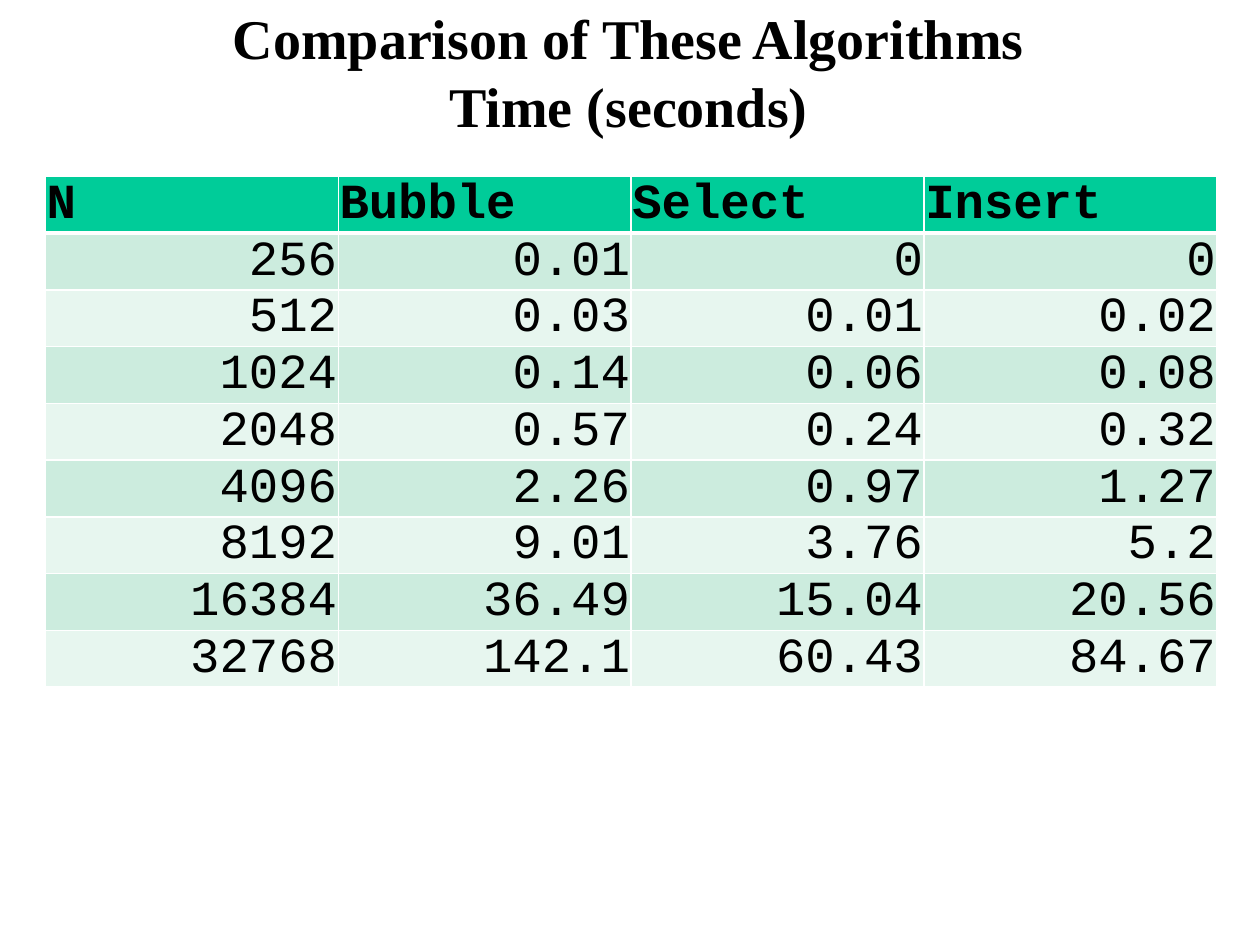
import lxml.etree
import pptx
import pptx.dml.color
import pptx.enum.text
import pptx.oxml.ns
import pptx.util
from pptx.util import Inches

BLACK = pptx.dml.color.RGBColor(0x00, 0x00, 0x00)
WHITE = pptx.dml.color.RGBColor(0xFF, 0xFF, 0xFF)
HEADER_GREEN = pptx.dml.color.RGBColor(0x00, 0xCC, 0x99)
BAND_GREENS = [
    pptx.dml.color.RGBColor(0xCC, 0xEC, 0xDE),
    pptx.dml.color.RGBColor(0xE7, 0xF6, 0xEF),
]

TIMES = [
    ["N", "Bubble", "Select", "Insert"],
    ["256", "0.01", "0", "0"],
    ["512", "0.03", "0.01", "0.02"],
    ["1024", "0.14", "0.06", "0.08"],
    ["2048", "0.57", "0.24", "0.32"],
    ["4096", "2.26", "0.97", "1.27"],
    ["8192", "9.01", "3.76", "5.2"],
    ["16384", "36.49", "15.04", "20.56"],
    ["32768", "142.1", "60.43", "84.67"],
]


def add_run(paragraph, text, font_name, size, bold):
    run = paragraph.add_run()
    run.text = text
    run.font.name = font_name
    run.font.size = pptx.util.Pt(size)
    run.font.bold = bold
    run.font.color.rgb = BLACK


def add_border(cell, side, points):
    qn = pptx.oxml.ns.qn
    properties = cell._tc.get_or_add_tcPr()
    line = lxml.etree.SubElement(properties, qn(f"a:ln{side}"), w=str(pptx.util.Pt(points)))
    fill = lxml.etree.SubElement(line, qn("a:solidFill"))
    lxml.etree.SubElement(fill, qn("a:srgbClr"), val=str(WHITE))


presentation = pptx.Presentation()
presentation.slide_width = Inches(10)
presentation.slide_height = Inches(7.5)
slide = presentation.slides.add_slide(presentation.slide_layouts[5])
slide.background.fill.solid()
slide.background.fill.fore_color.rgb = WHITE

# Title in two lines
title = slide.shapes.title
title.left, title.top = Inches(0.74), Inches(0.06)
title.width, title.height = Inches(8.5), Inches(1.01)
title.text_frame.vertical_anchor = pptx.enum.text.MSO_ANCHOR.MIDDLE
heading = title.text_frame.paragraphs[0]
heading.alignment = pptx.enum.text.PP_ALIGN.CENTER
add_run(heading, "Comparison of These Algorithms", "Times New Roman", 32, True)
heading.add_line_break()
add_run(heading, "Time (seconds)", "Times New Roman", 32, True)

# Table of running times
times_table = slide.shapes.add_table(
    len(TIMES), len(TIMES[0]),
    Inches(0.36), Inches(1.4), Inches(9.3), Inches(0.45 * len(TIMES)),
).table

for row, values in enumerate(TIMES):
    is_header = row == 0
    for column, value in enumerate(values):
        cell = times_table.cell(row, column)
        cell.margin_left = cell.margin_right = cell.margin_top = Inches(0.01)
        cell.margin_bottom = 0
        cell.vertical_anchor = pptx.enum.text.MSO_ANCHOR.BOTTOM

        # White grid with a thicker rule under the header
        for side in "LRTB":
            under_header = (row, side) in [(0, "B"), (1, "T")]
            add_border(cell, side, 3 if under_header else 1)
        cell.fill.solid()
        cell.fill.fore_color.rgb = HEADER_GREEN if is_header else BAND_GREENS[(row - 1) % 2]

        entry = cell.text_frame.paragraphs[0]
        entry.alignment = (
            pptx.enum.text.PP_ALIGN.LEFT if is_header else pptx.enum.text.PP_ALIGN.RIGHT
        )
        add_run(entry, value, "Courier New", 28, is_header)

presentation.save("out.pptx")
